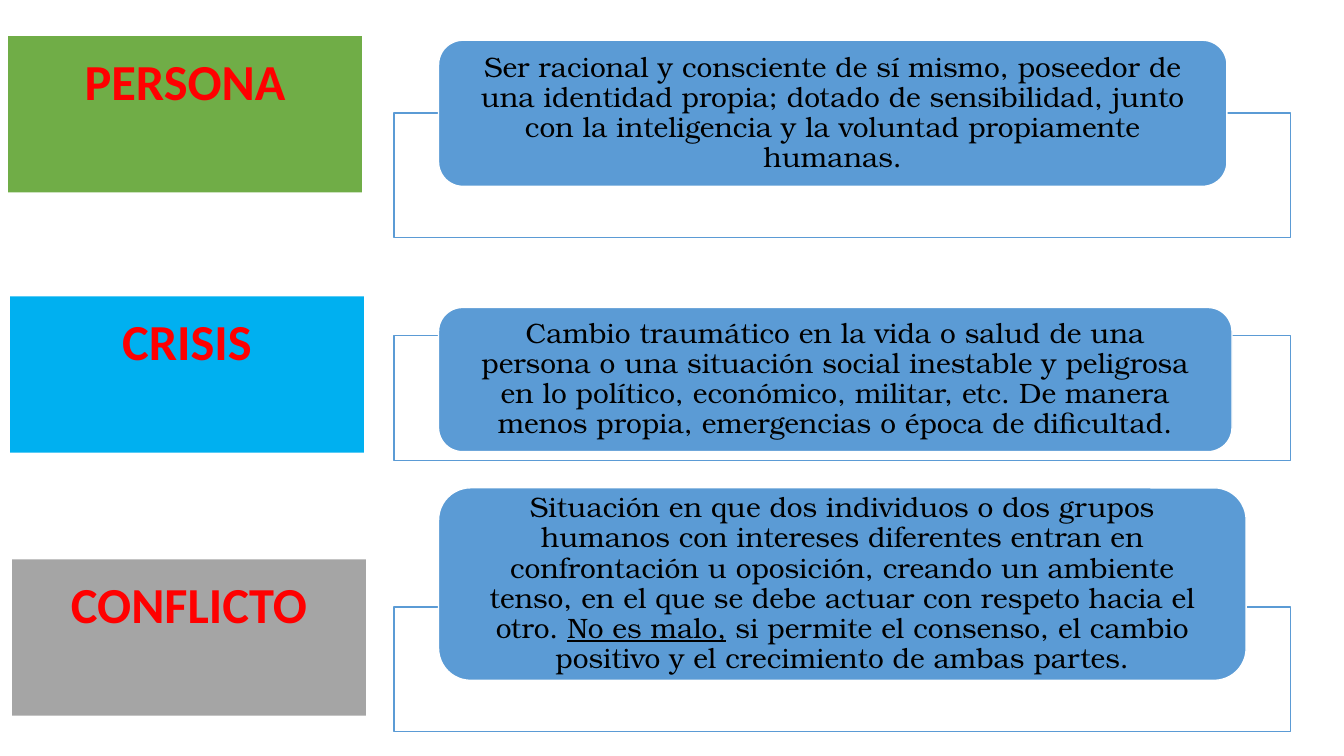
from pptx import Presentation
from pptx.dml.color import RGBColor as RGB
from pptx.enum.shapes import MSO_SHAPE as SHAPE
from pptx.enum.text import MSO_ANCHOR as ANCHOR, PP_ALIGN as ALIGN
from pptx.oxml.ns import qn
from pptx.util import Inches, Pt
from lxml.etree import SubElement

GREEN = RGB(0x70, 0xAD, 0x47)
CYAN = RGB(0x00, 0xB0, 0xF0)
GRAY = RGB(0xA5, 0xA5, 0xA5)
BLUE = RGB(0x5B, 0x9B, 0xD5)
RED = RGB(0xFF, 0x00, 0x00)
BLACK = RGB(0x00, 0x00, 0x00)
WHITE = RGB(0xFF, 0xFF, 0xFF)

# Shared measures, in percent of the slide's width or height
LABEL_W, LABEL_H = 26.33, 20.67
FRAME_X, FRAME_W, FRAME_H = 29.33, 66.69, 16.53
CARD_X = 32.63

# Label (text, fill, x, y), frame y, card (y, width, height), runs (text, underlined)
TERMS = [
    (("PERSONA", GREEN, 0.6, 4.8), 14.93, (5.33, 58.66, 19.33), [
        ("Ser racional y consciente de sí mismo, poseedor de una identidad propia; "
         "dotado de sensibilidad, junto con la inteligencia y la voluntad "
         "propiamente humanas.", False)]),
    (("CRISIS", CYAN, 0.75, 39.2), 44.4, (40.67, 59.04, 19.07), [
        ("Cambio traumático en la vida o salud de una persona o una situación "
         "social inestable y peligrosa en lo político, económico, militar, etc. "
         "De manera menos propia, emergencias o época de dificultad.", False)]),
    (("CONFLICTO", GRAY, 0.9, 74), 80.27, (64.53, 60.09, 25.47), [
        ("Situación en que dos individuos o dos grupos humanos con intereses "
         "diferentes entran en confrontación u oposición, creando un ambiente "
         "tenso, en el que se debe actuar con respeto hacia el otro. ", False),
        ("No es malo,", True),
        (" si permite el consenso, el cambio positivo y el crecimiento de ambas "
         "partes.", False)]),
]


class Board:
    """Holds the style and the current slide; lengths are percents of it."""
    head_font, head_size = "Calibri", Pt(36)
    body_font, body_size = "TeX Gyre Bonum", Pt(20)

    def __init__(self, deck):
        self.wide, self.high = deck.slide_width, deck.slide_height
        self.slide = deck.slides.add_slide(deck.slide_layouts[6])

    def box(self, kind, x, y, w, h, fill, line=None):
        shape = self.slide.shapes.add_shape(
            kind, int(self.wide * x / 100), int(self.high * y / 100),
            int(self.wide * w / 100), int(self.high * h / 100))
        shape.shadow.inherit = False
        shape.fill.solid()
        shape.fill.fore_color.rgb = fill
        if line is None:
            shape.line.fill.background()
        else:
            shape.line.color.rgb = line
            shape.line.width = Pt(1)
        return shape

    def say(self, para, text, font, size, color, bold=False, under=False):
        run = para.add_run()
        run.text = text
        run.font.name, run.font.size = font, size
        run.font.bold, run.font.underline = bold, under
        run.font.color.rgb = color

    def label(self, text, fill, x, y):
        frame = self.box(SHAPE.RECTANGLE, x, y, LABEL_W, LABEL_H, fill).text_frame
        frame.word_wrap = False
        frame.vertical_anchor = ANCHOR.TOP
        para = frame.paragraphs[0]
        para.alignment, para.line_spacing = ALIGN.CENTER, 1.15
        para.space_after = Pt(10)
        self.say(para, text, self.head_font, self.head_size, RED, bold=True)

    def frame(self, y):
        shape = self.box(SHAPE.RECTANGLE, FRAME_X, y, FRAME_W, FRAME_H, WHITE, BLUE)
        color = shape.element.spPr.find(qn("a:solidFill"))[0]
        SubElement(color, qn("a:alpha")).set("val", "90000")

    def card(self, y, w, h, runs):
        shape = self.box(SHAPE.ROUNDED_RECTANGLE, CARD_X, y, w, h, BLUE, WHITE)
        frame = shape.text_frame
        frame.word_wrap = True
        frame.vertical_anchor = ANCHOR.MIDDLE
        frame.margin_left = frame.margin_right = Inches(0.24)
        frame.margin_top = frame.margin_bottom = 0
        para = frame.paragraphs[0]
        para.alignment, para.line_spacing = ALIGN.CENTER, 0.9
        for text, under in runs:
            self.say(para, text, self.body_font, self.body_size, BLACK, under=under)


def main():
    deck = Presentation()
    deck.slide_width, deck.slide_height = Inches(13.33), Inches(7.5)
    board = Board(deck)

    # One row per term: label on the left, framed definition on the right
    for label, top, card, runs in TERMS:
        board.label(*label)
        board.frame(top)
        board.card(*card, runs)

    deck.save("out.pptx")


if __name__ == "__main__":
    main()
